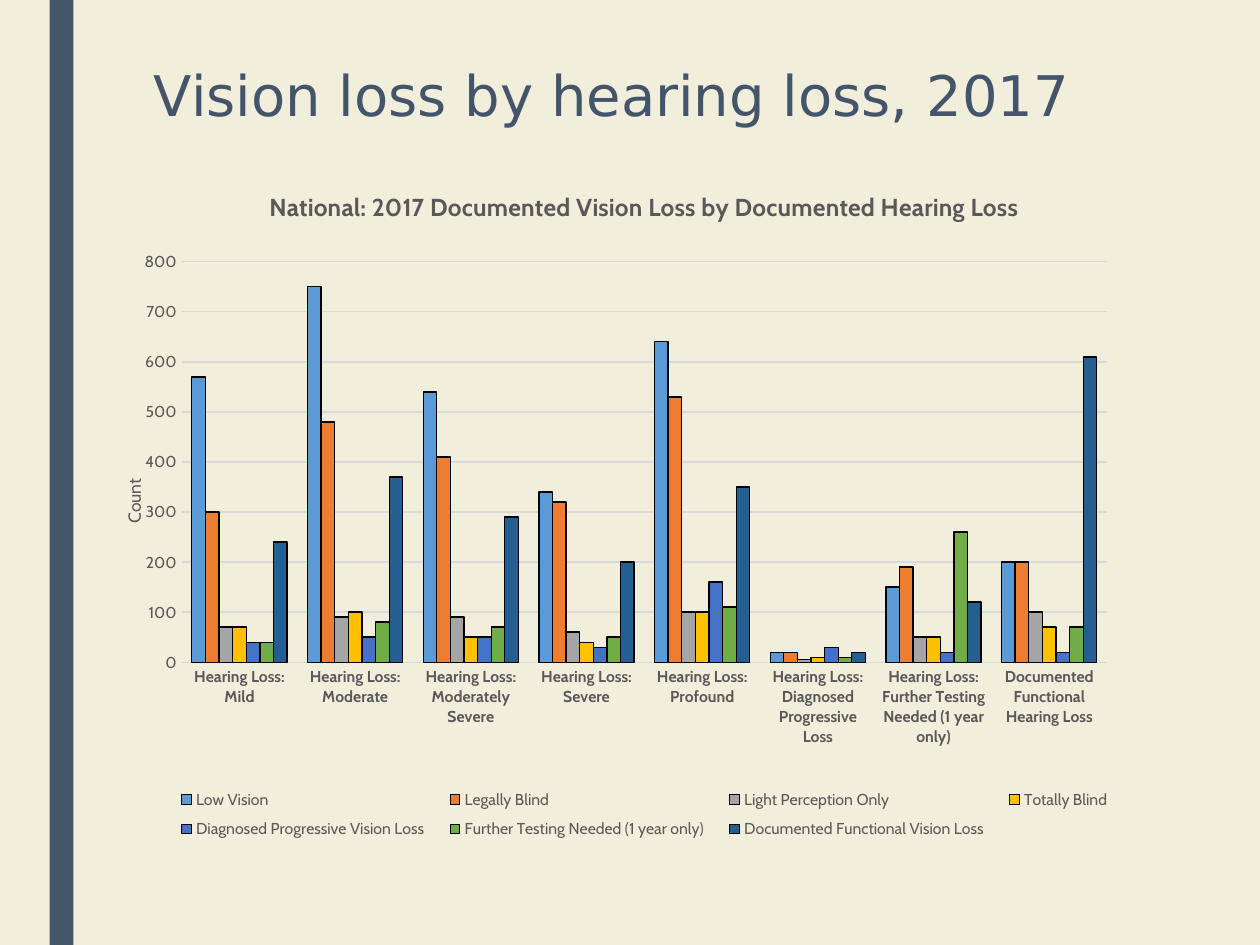
import pptx
import pptx.util
import pptx.chart.data
import pptx.dml.color
import pptx.enum.chart
import pptx.enum.shapes
import pptx.enum.text
import pptx.oxml
import pptx.oxml.ns

Cm = pptx.util.Cm
Pt = pptx.util.Pt
RGB = pptx.dml.color.RGBColor
CREAM = RGB(0xF1, 0xEE, 0xDB)
SLATE = RGB(0x44, 0x54, 0x6A)
GREY = RGB(0x59, 0x59, 0x59)
PALE = RGB(0xD9, 0xD9, 0xD9)
BLACK = RGB(0, 0, 0)
SKY = RGB(0x5B, 0x9B, 0xD5)
RUST = RGB(0xED, 0x7D, 0x31)
ASH = RGB(0xA5, 0xA5, 0xA5)
GOLD = RGB(0xFF, 0xC0, 0x00)
BLUE = RGB(0x44, 0x72, 0xC4)
GREEN = RGB(0x70, 0xAD, 0x47)
NAVY = RGB(0x25, 0x5E, 0x91)

GROUPS = [
    "Hearing Loss: Mild",
    "Hearing Loss: Moderate",
    "Hearing Loss: Moderately Severe",
    "Hearing Loss: Severe",
    "Hearing Loss: Profound",
    "Hearing Loss: Diagnosed Progressive Loss",
    "Hearing Loss: Further Testing Needed (1 year only)",
    "Documented Functional Hearing Loss",
]
SERIES = [
    ("Low Vision", SKY, (570, 750, 540, 340, 640, 20, 150, 200)),
    ("Legally Blind", RUST, (300, 480, 410, 320, 530, 20, 190, 200)),
    ("Light Perception Only", ASH, (70, 90, 90, 60, 100, 5, 50, 100)),
    ("Totally Blind", GOLD, (70, 100, 50, 40, 100, 10, 50, 70)),
    ("Diagnosed Progressive Vision Loss", BLUE, (40, 50, 50, 30, 160, 30, 20, 20)),
    ("Further Testing Needed (1 year only)", GREEN, (40, 80, 70, 50, 110, 10, 260, 70)),
    ("Documented Functional Vision Loss", NAVY, (240, 370, 290, 200, 350, 20, 120, 610)),
]


def style(font, size, color=GREY, bold=False, name="Cabin"):
    """Set the look of a font."""
    font.name, font.size, font.bold = name, Pt(size), bold
    font.color.rgb = color


def label(title, text, size, bold=False):
    """Write a chart or axis title as one run."""
    run = title.text_frame.paragraphs[0].add_run()
    run.text = text
    style(run.font, size, bold=bold)


def place(part, **spots):
    """Fix the layout of a chart part by fractions of the chart."""
    for old in part.findall(pptx.oxml.ns.qn("c:layout")):
        part.remove(old)
    marks = "".join(f'<c:{key} val="{val}"/>' for key, val in spots.items())
    lay = pptx.oxml.parse_xml(
        f'<c:layout {pptx.oxml.ns.nsdecls("c")}><c:manualLayout>{marks}'
        "</c:manualLayout></c:layout>"
    )
    heads = [pptx.oxml.ns.qn(tag) for tag in ("c:tx", "c:legendPos")]
    lead = sum(child.tag in heads for child in part)
    part.insert(lead, lay)


def add_band(slide, box):
    """Draw the upright band at the left."""
    band = slide.shapes.add_shape(pptx.enum.shapes.MSO_SHAPE.RECTANGLE, *map(Cm, box))
    band.shadow.inherit = False
    band.fill.solid()
    band.fill.fore_color.rgb = SLATE
    band.line.fill.background()


def add_title(slide, box):
    """Place and fill the slide title."""
    title = slide.shapes.title
    title.left, title.top, title.width, title.height = map(Cm, box)
    frame = title.text_frame
    frame.word_wrap = True
    frame.vertical_anchor = pptx.enum.text.MSO_ANCHOR.TOP
    para = frame.paragraphs[0]
    para.alignment = pptx.enum.text.PP_ALIGN.LEFT
    para.line_spacing = 0.89
    run = para.add_run()
    run.text = "Vision loss by hearing loss, 2017"
    style(run.font, 32, SLATE, name="DejaVu Sans")


def set_axes(chart):
    """Format both axes and the grid."""
    none = pptx.enum.chart.XL_TICK_MARK.NONE
    cat, val = chart.category_axis, chart.value_axis
    for axis in (cat, val):
        axis.major_tick_mark = axis.minor_tick_mark = none
        style(axis.tick_labels.font, 9, bold=axis is cat)
    val.minimum_scale, val.maximum_scale, val.major_unit = 0, 800, 100
    val.tick_labels.number_format = "0"
    val.tick_labels.number_format_is_linked = False
    val.format.line.fill.background()
    for line in (cat.format.line, val.major_gridlines.format.line):
        line.color.rgb, line.width = PALE, Pt(0.75)
    label(val.axis_title, "Count", 10)
    place(val.axis_title._element, xMode="edge", yMode="edge", x=0, y=0.45)


def set_legend(chart):
    """Lay the legend out in two rows below the plot."""
    chart.has_legend = True
    legend = chart.legend
    legend.position = pptx.enum.chart.XL_LEGEND_POSITION.BOTTOM
    legend.include_in_layout = False
    style(legend.font, 9)
    place(legend._element, xMode="edge", yMode="edge", x=0.04, y=0.89, w=0.92, h=0.1)


def add_chart(slide, box):
    """Build the clustered column chart."""
    data = pptx.chart.data.CategoryChartData()
    data.categories = GROUPS
    for name, _, vals in SERIES:
        data.add_series(name, vals)
    kind = pptx.enum.chart.XL_CHART_TYPE.COLUMN_CLUSTERED
    chart = slide.shapes.add_chart(kind, *map(Cm, box), data).chart
    style(chart.font, 10, BLACK)
    label(chart.chart_title, "National: 2017 Documented Vision Loss by Documented Hearing Loss", 14, True)
    chart.chart_title.include_in_layout = False
    set_legend(chart)
    set_axes(chart)
    plot = chart.plots[0]
    plot.gap_width, plot.overlap, plot.vary_by_categories = 150, 0, False
    for bars, (_, color, _) in zip(plot.series, SERIES):
        bars.format.fill.solid()
        bars.format.fill.fore_color.rgb = color
        bars.format.line.color.rgb = BLACK
        bars.format.line.width = Pt(0.75)
    area = chart._chartSpace.chart.plotArea
    place(area, layoutTarget="inner", xMode="edge", yMode="edge", x=0.06, y=0.14, w=0.88, h=0.58)


def main():
    """Build and save the slide."""
    deck = pptx.Presentation()
    deck.slide_width, deck.slide_height = Cm(25.4), Cm(19.05)
    slide = deck.slides.add_slide(deck.slide_layouts[5])
    slide.background.fill.solid()
    slide.background.fill.fore_color.rgb = CREAM
    add_band(slide, (1, 0, 0.48, 19.05))
    add_title(slide, (2.85, 1.25, 20, 2.1))
    add_chart(slide, (2.39, 3.33, 21.2, 13.92))
    deck.save("out.pptx")


if __name__ == "__main__":
    main()
